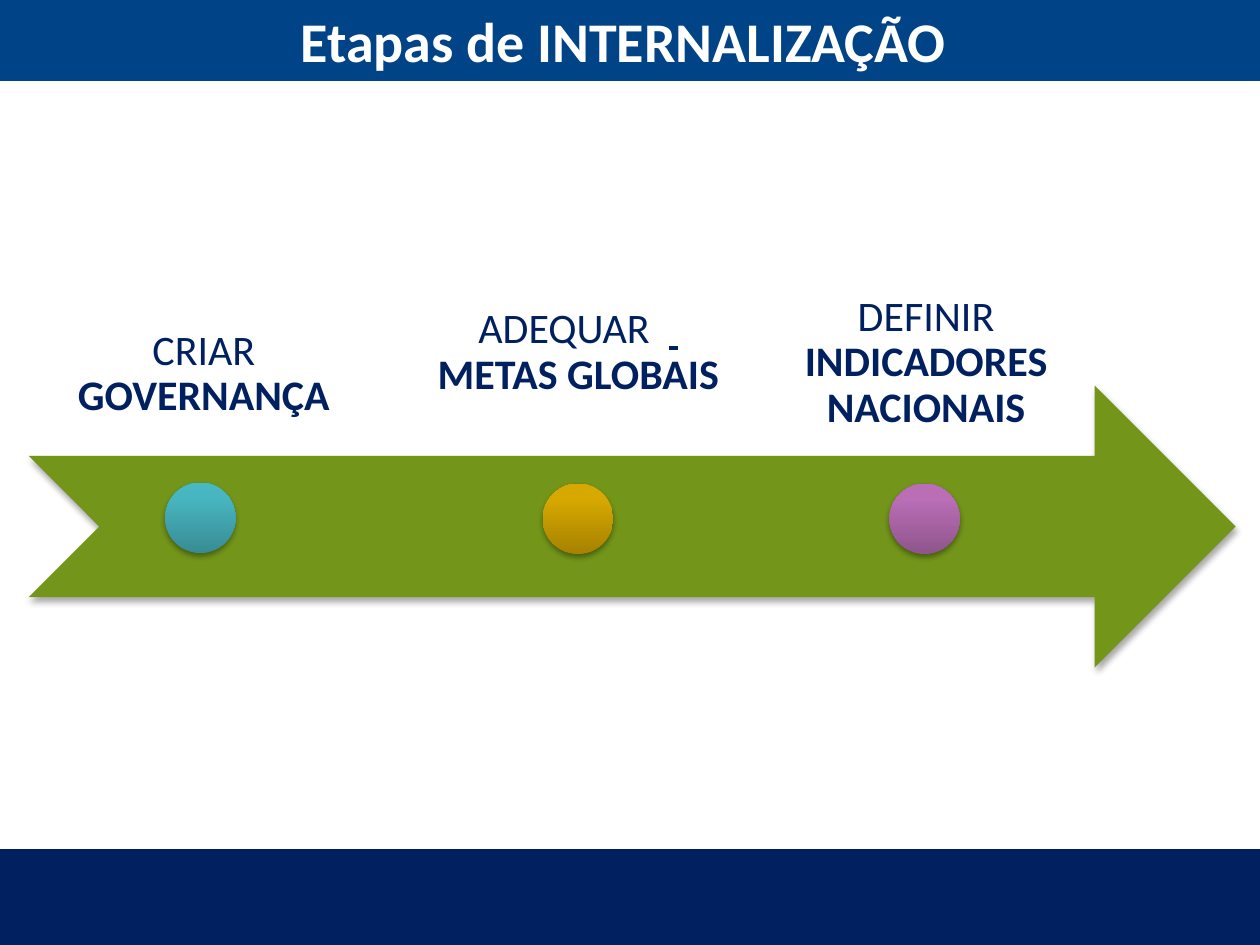
from copy import deepcopy
from dataclasses import dataclass

from lxml.etree import SubElement
from pptx import Presentation
from pptx.dml.color import RGBColor
from pptx.enum.shapes import MSO_SHAPE as Preset
from pptx.enum.text import MSO_ANCHOR as Anchor, MSO_AUTO_SIZE as AutoSize, PP_ALIGN as Align
from pptx.oxml.ns import qn
from pptx.util import Cm, Pt

FONT = "Calibri"
NAVY = "002060"
BLUE = "004386"
GREEN = "72951A"
WHITE = "FFFFFF"
SLIDE_WIDTH, SLIDE_HEIGHT = 25.4, 19.05
FOOTER_TOP = 17.12
LABEL_WIDTH = 7.06
LABEL_INSET = 0.48
DOT_SIZE = 1.42


@dataclass(frozen=True)
class Phrase:
    text: str
    bold: bool = False
    underline: bool = False


@dataclass(frozen=True)
class Stage:
    phrases: tuple[Phrase, ...]
    label_left: float
    label_top: float
    label_height: float
    anchor: Anchor
    dot_left: float
    dot_top: float
    gradient: tuple[str, str, str]


STAGES = (
    Stage((Phrase("CRIAR "), Phrase("GOVERNANÇA", bold=True)),
          0.58, 6.3, 2.64, Anchor.BOTTOM, 3.33, 9.73, ("388C95", "48B6C1", "46B9C4")),
    Stage((Phrase("ADEQUAR  "), Phrase("  ", bold=True, underline=True),
           Phrase("METAS GLOBAIS", bold=True)),
          8.13, 5.72, 2.01, Anchor.TOP, 10.94, 9.75, ("A68200", "D7A900", "D8A900")),
    Stage((Phrase("DEFINIR "), Phrase("INDICADORES NACIONAIS", bold=True)),
          15.14, 6.12, 3.05, Anchor.BOTTOM, 17.93, 9.75, ("8F558C", "BA6EB6", "BC6EB8")),
)


def color(value: str) -> RGBColor:
    """Turn a hex string into a colour."""
    return RGBColor.from_string(value)


def fill_solid(shape, value: str) -> None:
    """Fill a shape with one colour."""
    shape.fill.solid()
    shape.fill.fore_color.rgb = color(value)


def fill_gradient(shape, values: tuple[str, str, str]) -> None:
    """Shade a shape upwards through three colours."""
    shape.fill.gradient()
    shape.fill.gradient_angle = 90
    stop_list = shape.element.spPr.find(qn("a:gradFill")).find(qn("a:gsLst"))
    stop_list.append(deepcopy(stop_list[-1]))
    for stop, position, value in zip(shape.fill.gradient_stops, (0, 0.8, 1), values):
        stop.position = position
        stop.color.rgb = color(value)


def add_preset(slide, preset: Preset, left: float, top: float, width: float, height: float):
    """Add a preset shape without line or shadow."""
    shape = slide.shapes.add_shape(preset, Cm(left), Cm(top), Cm(width), Cm(height))
    shape.line.fill.background()
    shape.shadow.inherit = False
    return shape


def add_shadow(shape) -> None:
    """Give a shape a soft shadow below it."""
    effects = shape.element.spPr.find(qn("a:effectLst"))
    shadow = SubElement(effects, qn("a:outerShdw"), blurRad=str(Pt(3.1)), dist=str(Pt(1.8)),
                        dir="5400000", rotWithShape="0")
    shade = SubElement(shadow, qn("a:srgbClr"), val="000000")
    SubElement(shade, qn("a:alpha"), val="35000")


def format_run(run, size: float, value: str, bold: bool) -> None:
    """Set the font of a run."""
    run.font.name = FONT
    run.font.size = Pt(size)
    run.font.bold = bold
    run.font.color.rgb = color(value)


def set_title(slide, text: str) -> None:
    """Place the title in the top band."""
    title = slide.shapes.title
    title.left, title.top, title.width, title.height = Cm(0), Cm(0), Cm(SLIDE_WIDTH), Cm(1.63)
    fill_solid(title, BLUE)
    frame = title.text_frame
    frame.text = text
    frame.word_wrap = True
    frame.auto_size = AutoSize.NONE
    frame.vertical_anchor = Anchor.MIDDLE
    paragraph = frame.paragraphs[0]
    paragraph.alignment = Align.CENTER
    format_run(paragraph.runs[0], 32, WHITE, True)


def add_label(slide, stage: Stage) -> None:
    """Write the label of a stage."""
    box = slide.shapes.add_textbox(Cm(stage.label_left), Cm(stage.label_top),
                                   Cm(LABEL_WIDTH), Cm(stage.label_height))
    frame = box.text_frame
    frame.word_wrap = True
    frame.vertical_anchor = stage.anchor
    frame.margin_left = frame.margin_right = Cm(LABEL_INSET)
    frame.margin_top = frame.margin_bottom = Cm(LABEL_INSET)
    paragraph = frame.paragraphs[0]
    paragraph.alignment = Align.CENTER
    paragraph.line_spacing = 0.9
    for phrase in stage.phrases:
        run = paragraph.add_run()
        run.text = phrase.text
        format_run(run, 24, NAVY, phrase.bold)
        run.font.underline = phrase.underline


def add_stage(slide, stage: Stage) -> None:
    """Draw the label and dot of a stage."""
    add_label(slide, stage)
    dot = add_preset(slide, Preset.OVAL, stage.dot_left, stage.dot_top, DOT_SIZE, DOT_SIZE)
    fill_gradient(dot, stage.gradient)
    add_shadow(dot)


def main() -> None:
    """Build and save the slide."""
    presentation = Presentation()
    presentation.slide_width, presentation.slide_height = Cm(SLIDE_WIDTH), Cm(SLIDE_HEIGHT)
    slide = presentation.slides.add_slide(presentation.slide_layouts[5])
    set_title(slide, "Etapas de INTERNALIZAÇÃO ")
    footer = add_preset(slide, Preset.RECTANGLE, 0, FOOTER_TOP, SLIDE_WIDTH,
                        SLIDE_HEIGHT - FOOTER_TOP)
    fill_solid(footer, NAVY)
    arrow = add_preset(slide, Preset.NOTCHED_RIGHT_ARROW, 0.58, 7.77, 24.33, 5.69)
    fill_solid(arrow, GREEN)
    add_shadow(arrow)
    for stage in STAGES:
        add_stage(slide, stage)
    presentation.save("out.pptx")


if __name__ == "__main__":
    main()
